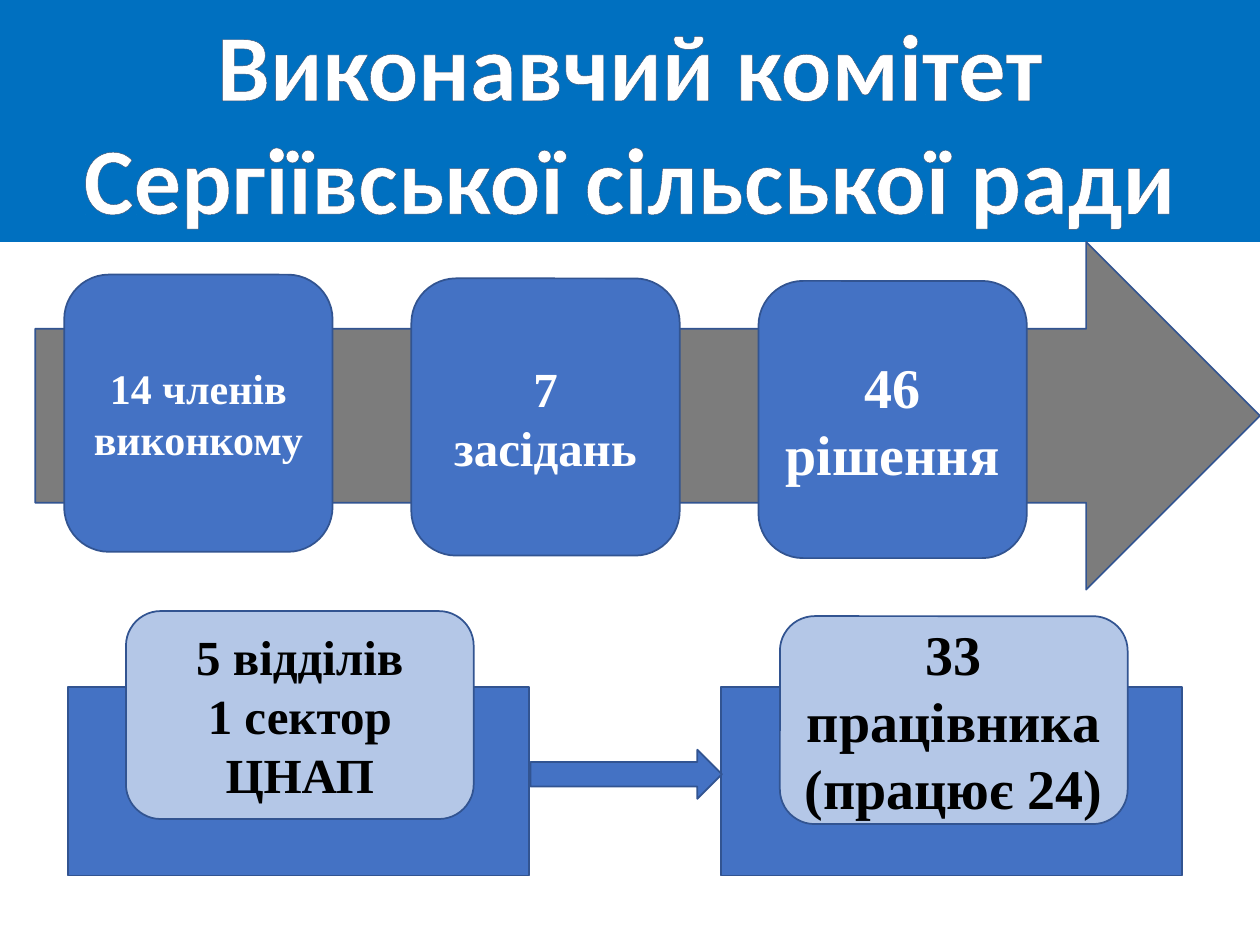
"""Build the executive committee summary slide."""
import pptx
import pptx.dml.color
import pptx.enum.shapes
import pptx.enum.text
import pptx.oxml
import pptx.oxml.ns
import pptx.util

Inches = pptx.util.Inches
SHAPES = pptx.enum.shapes.MSO_SHAPE
ANCHORS = pptx.enum.text.MSO_ANCHOR

THEME = {
    "banner": "0070C0", "arrow": "7C7C7C", "blue": "4472C4", "pale": "B4C7E7",
    "line": "325491", "title_outline": "3A5274", "light": "FFFFFF", "dark": "000000",
    "title_font": "Calibri", "body_font": "Times New Roman",
    "title": 54, "small": 24, "medium": 28, "large": 32,
}

TITLE = "Виконавчий комітет Сергіївської сільської ради"
RESULTS = [
    ("14 членів виконкому", "small", 2.18),
    ("7 засідань", "medium", 2.21),
    ("46 рішення", "large", 2.23),
]
STAFF = [
    ("5 відділів\n1 сектор\nЦНАП", "medium", 0.54, 1.0, 4.85),
    ("33 працівника (працює 24)", "large", 5.72, 6.19, 4.89),
]
RESULT_LEFT, RESULT_STEP = 0.51, 2.755


def color(name):
    return pptx.dml.color.RGBColor.from_string(THEME[name])


def fill_shape(shape, name):
    shape.fill.solid()
    shape.fill.fore_color.rgb = color(name)


def write_text(shape, text, font, size, ink, anchor):
    frame = shape.text_frame
    frame.text = text
    frame.word_wrap = True
    frame.auto_size = pptx.enum.text.MSO_AUTO_SIZE.NONE
    frame.vertical_anchor = anchor
    for paragraph in frame.paragraphs:
        paragraph.alignment = pptx.enum.text.PP_ALIGN.CENTER
        paragraph.line_spacing = 1.0
        paragraph.space_before = pptx.util.Pt(0)
        for run in paragraph.runs:
            run.font.name = THEME[font]
            run.font.size = pptx.util.Pt(THEME[size])
            run.font.bold = True
            run.font.color.rgb = color(ink)


def add_block(slide, kind, box, fill, text="", size="medium", ink="light"):
    shape = slide.shapes.add_shape(kind, *map(Inches, box))
    shape.shadow.inherit = False
    fill_shape(shape, fill)
    shape.line.color.rgb = color("line")
    shape.line.width = pptx.util.Pt(1)
    if text:
        write_text(shape, text, "body_font", size, ink, ANCHORS.MIDDLE)


def format_title(title):
    title.left, title.top, title.width, title.height = map(Inches, (0, 0, 10, 1.92))
    fill_shape(title, "banner")
    write_text(title, TITLE, "title_font", "title", "light", ANCHORS.TOP)
    outline = pptx.oxml.parse_xml(
        f'<a:ln {pptx.oxml.ns.nsdecls("a")} w="12700"><a:solidFill>'
        f'<a:srgbClr val="{THEME["title_outline"]}"/></a:solidFill></a:ln>'
    )
    title.text_frame.paragraphs[0].runs[0].font._element.insert(0, outline)


def main():
    presentation = pptx.Presentation()
    presentation.slide_width, presentation.slide_height = Inches(10), Inches(7.5)
    slide = presentation.slides.add_slide(presentation.slide_layouts[5])
    format_title(slide.shapes.title)

    add_block(slide, SHAPES.RIGHT_ARROW, (0.28, 1.92, 9.72, 2.76), "arrow")
    for index, (text, size, top) in enumerate(RESULTS):
        box = (RESULT_LEFT + index * RESULT_STEP, top, 2.13, 2.2)
        add_block(slide, SHAPES.ROUNDED_RECTANGLE, box, "blue", text, size)

    for text, size, base_left, card_left, card_top in STAFF:
        add_block(slide, SHAPES.RECTANGLE, (base_left, 5.45, 3.66, 1.5), "blue")
        card = (card_left, card_top, 2.76, 1.65)
        add_block(slide, SHAPES.ROUNDED_RECTANGLE, card, "pale", text, size, "dark")
    add_block(slide, SHAPES.RIGHT_ARROW, (4.21, 5.95, 1.52, 0.39), "blue")

    presentation.save("out.pptx")


if __name__ == "__main__":
    main()
